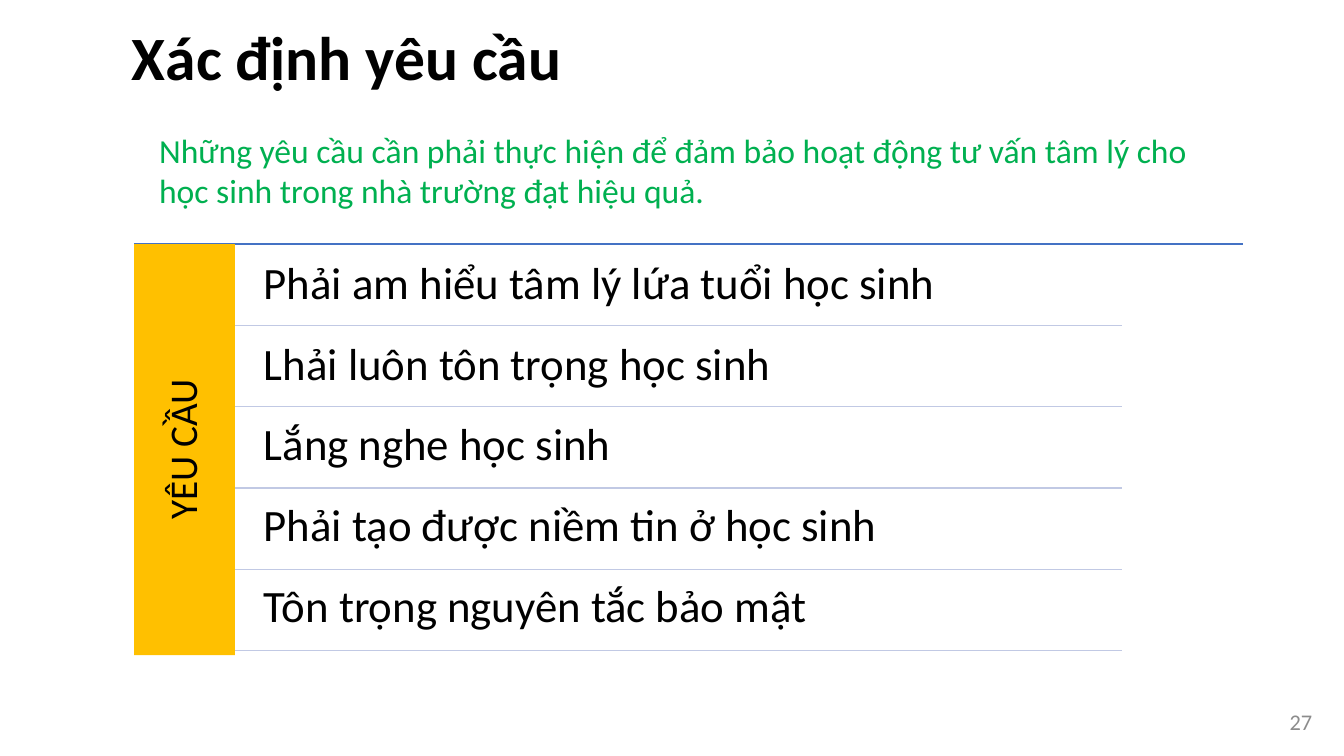
from dataclasses import dataclass

from lxml.etree import SubElement
from pptx import Presentation
from pptx.dml.color import RGBColor
from pptx.enum.shapes import MSO_CONNECTOR, MSO_SHAPE
from pptx.enum.text import MSO_ANCHOR, MSO_AUTO_SIZE, PP_ALIGN
from pptx.oxml.ns import qn
from pptx.util import Cm, Pt


@dataclass(frozen=True)
class Theme:
    font: str = "Calibri"
    black: str = "000000"
    green: str = "00B050"
    gold: str = "FFC000"
    blue: str = "4472C4"
    pale: str = "C1C9E4"
    grey: str = "8C8C8C"
    title: int = 44
    item: int = 32
    label: int = 28
    intro: int = 24
    page: int = 16
    line: float = 1
    lead: float = 0.9
    gap: float = 22.95


THEME = Theme()
TOP = 6.15
LEFT = 3.38
BAR = 2.54
ROW = 2.05
NEEDS = [
    "Phải am hiểu tâm lý lứa tuổi học sinh",
    "Lhải luôn tôn trọng học sinh",
    "Lắng nghe học sinh",
    "Phải tạo được niềm tin ở học sinh",
    "Tôn trọng nguyên tắc bảo mật",
]


def place(shape, left, top, width, height):
    shape.left, shape.top = Cm(left), Cm(top)
    shape.width, shape.height = Cm(width), Cm(height)


def set_frame(frame, anchor=MSO_ANCHOR.TOP, inset=None):
    frame.word_wrap = True
    frame.auto_size = MSO_AUTO_SIZE.NONE
    frame.vertical_anchor = anchor
    if inset is not None:
        frame.margin_left = frame.margin_right = Cm(inset)
        frame.margin_top = frame.margin_bottom = Cm(inset)


def add_run(para, text, size, color, bold=False, align=PP_ALIGN.LEFT):
    para.alignment = align
    run = para.add_run()
    run.text = text
    font = run.font
    font.name, font.size, font.bold = THEME.font, Pt(size), bold
    font.color.rgb = RGBColor.from_string(color)


def add_title(slide, text):
    title = slide.shapes.title
    place(title, 3.07, 0.36, 23.14, 2.13)
    set_frame(title.text_frame)
    add_run(title.text_frame.paragraphs[0], text, THEME.title, THEME.black,
            bold=True, align=PP_ALIGN.JUSTIFY)


def add_list(slide, items):
    body = slide.placeholders[1]
    place(body, 6.32, 6.25, 21.95, ROW * len(items))
    frame = body.text_frame
    set_frame(frame, inset=0.33)
    for i, item in enumerate(items):
        para = frame.add_paragraph() if i else frame.paragraphs[0]
        para.line_spacing = THEME.lead
        para.space_before, para.space_after = Pt(0), Pt(THEME.gap)
        add_run(para, item, THEME.item, THEME.black)
        props = para._p.get_or_add_pPr()
        props.set("marL", "0")
        props.set("indent", "0")
        SubElement(props, qn("a:buNone"))


def add_text(slide, box, text, size, color, align=PP_ALIGN.LEFT,
             anchor=MSO_ANCHOR.TOP):
    frame = slide.shapes.add_textbox(*map(Cm, box)).text_frame
    set_frame(frame, anchor)
    add_run(frame.paragraphs[0], text, size, color, align=align)


def add_rule(slide, left, right, top, color):
    rule = slide.shapes.add_connector(
        MSO_CONNECTOR.STRAIGHT, Cm(left), Cm(top), Cm(right), Cm(top))
    rule.line.color.rgb = RGBColor.from_string(color)
    rule.line.width = Pt(THEME.line)
    SubElement(rule.element.spPr, qn("a:effectLst"))


def add_bar(slide, text):
    bar = slide.shapes.add_shape(
        MSO_SHAPE.RECTANGLE, Cm(LEFT), Cm(TOP), Cm(BAR), Cm(10.36))
    bar.shadow.inherit = False
    bar.fill.solid()
    bar.fill.fore_color.rgb = RGBColor.from_string(THEME.gold)
    bar.line.fill.background()
    frame = bar.text_frame
    set_frame(frame, MSO_ANCHOR.MIDDLE, 0.3)
    bar.element.txBody.find(qn("a:bodyPr")).set("vert", "vert270")
    frame.paragraphs[0].line_spacing = THEME.lead
    add_run(frame.paragraphs[0], text, THEME.label, THEME.black,
            align=PP_ALIGN.CENTER)


def main():
    deck = Presentation()
    deck.slide_width, deck.slide_height = Cm(33.87), Cm(19.05)
    slide = deck.slides.add_slide(deck.slide_layouts[1])

    add_title(slide, "Xác định yêu cầu")
    add_text(slide, (3.76, 3.15, 27.15, 2.31),
             "Những yêu cầu cần phải thực hiện để đảm bảo hoạt động tư vấn "
             "tâm lý cho học sinh trong nhà trường đạt hiệu quả.",
             THEME.intro, THEME.green)
    add_rule(slide, LEFT, 31.32, TOP, THEME.blue)
    add_bar(slide, "YÊU CẦU")
    add_list(slide, NEEDS)
    for i in range(len(NEEDS)):
        add_rule(slide, LEFT + BAR, 28.27, 8.2 + i * ROW, THEME.pale)
    add_text(slide, (30.07, 17.68, 3.25, 1.02), "27", THEME.page, THEME.grey,
             PP_ALIGN.RIGHT, MSO_ANCHOR.MIDDLE)

    deck.save("out.pptx")


if __name__ == "__main__":
    main()
